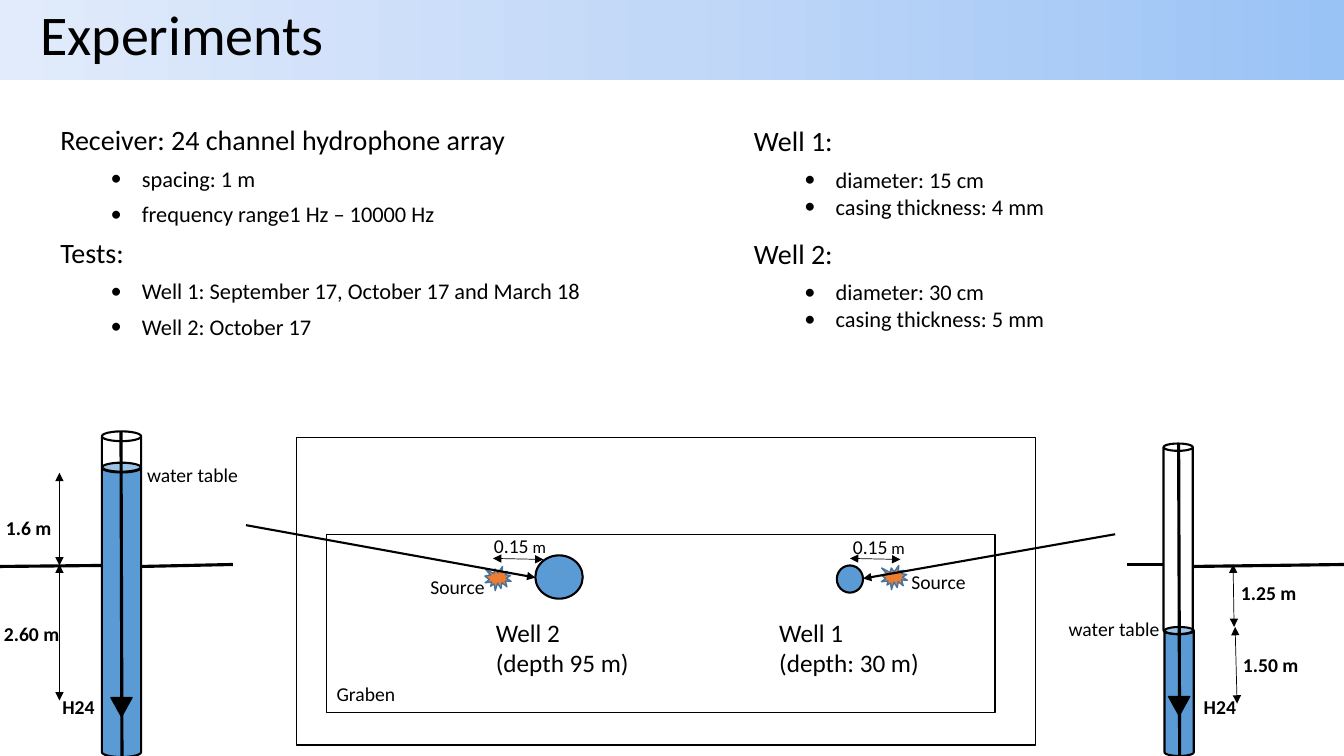
from copy import deepcopy

from lxml import etree
from pptx import Presentation
from pptx.dml.color import RGBColor
from pptx.enum.shapes import MSO_CONNECTOR, MSO_SHAPE
from pptx.enum.text import MSO_ANCHOR, MSO_AUTO_SIZE, PP_ALIGN
from pptx.oxml.ns import qn
from pptx.util import Inches, Pt

BLACK = RGBColor(0x00, 0x00, 0x00)
WATER = RGBColor(0x5B, 0x9B, 0xD5)
BLAST = RGBColor(0xED, 0x7D, 0x31)
BLAST_EDGE = RGBColor(0x43, 0x73, 0x9E)
BANNER = ((0, RGBColor(0x9A, 0xC3, 0xF5)),
          (0.5, RGBColor(0xC2, 0xD8, 0xF8)),
          (1, RGBColor(0xE1, 0xEB, 0xFB)))

RECT, OVAL, CAN = MSO_SHAPE.RECTANGLE, MSO_SHAPE.OVAL, MSO_SHAPE.CAN
TRIANGLE, BURST = MSO_SHAPE.ISOSCELES_TRIANGLE, MSO_SHAPE.EXPLOSION1
STRAIGHT = MSO_CONNECTOR.STRAIGHT
LEFT, MIDDLE, TOP = PP_ALIGN.LEFT, MSO_ANCHOR.MIDDLE, MSO_ANCHOR.TOP
FIT, FIXED = MSO_AUTO_SIZE.SHAPE_TO_FIT_TEXT, MSO_AUTO_SIZE.NONE

FONT = "Calibri"
COLS, ROWS = 133.3, 75
CELL = Inches(0.1)


def cells(*counts):
    """Lengths of the given numbers of grid cells."""
    return [round(count * CELL) for count in counts]


def apply(target, values):
    for name, value in values.items():
        setattr(target, name, value)


class Board:
    """Style and current slide; places are grid columns and rows."""

    def __init__(self, slide):
        self.slide = slide
        self.shapes = slide.shapes

    def shape(self, kind, box, fill=None, edge=BLACK, weight=1.5, **extra):
        item = self.shapes.add_shape(kind, *cells(*box))
        item.shadow.inherit = False
        if fill is None:
            item.fill.background()
        else:
            item.fill.solid()
            item.fill.fore_color.rgb = fill
        item.line.color.rgb = edge
        item.line.width = Pt(weight)
        apply(item, extra)
        return item

    def banner(self, box, stops):
        band = self.shape(RECT, box)
        band.line.fill.background()
        band.fill.gradient()
        band.fill.gradient_angle = 180
        stop_list = band.fill.gradient_stops
        first = next(band._element.spPr.iter(qn("a:gs")))
        for _ in range(len(stops) - len(stop_list)):
            first.addnext(deepcopy(first))
        for stop, (position, colour) in zip(band.fill.gradient_stops, stops):
            stop.position = position
            stop.color.rgb = colour

    def line(self, start, end, weight=2.25, arrows=()):
        link = self.shapes.add_connector(STRAIGHT, *cells(*start, *end))
        link.line.color.rgb = BLACK
        link.line.width = Pt(weight)
        outline = link.line._get_or_add_ln()
        for arrow in arrows:
            etree.SubElement(outline, qn(f"a:{arrow}"), type="triangle")
        etree.SubElement(link._element.spPr, qn("a:effectLst"))

    def measure(self, start, end):
        self.line(start, end, 0.5, ("headEnd", "tailEnd"))

    def text(self, box, paragraphs, wrap=False, anchor=TOP, fit=FIT):
        """Each paragraph is (runs, format values, bulleted); a run is (text, font values)."""
        frame = self.shapes.add_textbox(*cells(*box)).text_frame
        apply(frame, {"word_wrap": wrap, "vertical_anchor": anchor, "auto_size": fit})
        for index, (runs, values, bulleted) in enumerate(paragraphs):
            para = frame.add_paragraph() if index else frame.paragraphs[0]
            apply(para, {"alignment": LEFT, **values})
            if bulleted:
                para.level = 1
                props = para._p.get_or_add_pPr()
                for name, length in zip(("marL", "indent"), cells(8.1, -3.1)):
                    props.set(name, str(length))
                etree.SubElement(props, qn("a:buFont"), typeface=FONT)
                etree.SubElement(props, qn("a:buChar"), char="•")
            for words, font in runs:
                run = para.add_run()
                run.text = words
                apply(run.font, {"name": FONT, **font})
                run.font.color.rgb = BLACK

    def label(self, box, *lines, size=14, bold=False):
        font = {"size": Pt(size), "bold": bold}
        self.text(box, [([(words, font)], {}, False) for words in lines])

    def outline(self, box, entries):
        """Headings and bullets from (text, bulleted, space after)."""
        self.text(box, [([(words, {"size": Pt(16 if bulleted else 20)})],
                         {"space_after": Pt(after)}, bulleted)
                        for words, bulleted, after in entries], wrap=True)


def main():
    deck = Presentation()
    deck.slide_width, deck.slide_height = cells(COLS, ROWS)
    board = Board(deck.slides.add_slide(deck.slide_layouts[6]))

    # Title banner
    board.banner((0, 0, COLS, 7.9), BANNER)
    board.text((3, 0.7, 103.2, 6.1),
               [([("Experiments", {"size": Pt(40)})],
                 {"line_spacing": 0.9, "space_before": Pt(10)}, False)],
               wrap=True, anchor=MIDDLE, fit=FIXED)

    # Site plan: surrounding area and graben
    board.shape(RECT, (29.4, 43.4, 73.3, 30.5), weight=1)
    board.shape(RECT, (32.4, 53, 66.3, 17.7), weight=1)
    board.label((32.4, 67.2, 7.9, 3.4), "Graben")

    # Wells in plan: circle, name, source, offset between them
    plans = (
        ((83, 56.1, 2.6, 2.7), (76.3, 60.7, 16.1, 7.1), ("Well 1", "(depth: 30 m)"),
         (87.4, 56.1), (89.4, 56.1), 84.3, (83.6, 52.6)),
        ((53.1, 55.1, 4.7, 4.3), (48.2, 60.7, 15.4, 7.1), ("Well 2", "(depth 95 m)"),
         (48.1, 56.2), (41.7, 56.5), 48.9, (48, 52.5)),
    )
    for circle, name_box, name, blast, source, offset, distance in plans:
        board.shape(OVAL, circle, WATER)
        board.label(name_box, *name, size=18)
        board.label((*source, 7.4, 3.4), "Source")
        board.shape(BURST, (*blast, 2.6, 2.4), BLAST, BLAST_EDGE, 1)
        board.measure((offset, 55.4), (offset + 5, 55.5))
        board.text((*distance, 7.2, 3.4),
                   [([("0.15", {"size": Pt(14)}), (" m", {"size": Pt(12)})], {}, False)])

    # Wells in section: water, casing, hydrophone string, ground, water table
    sections = (
        ((115.5, 62.2, 2.9, 12.8), (115.4, 44, 2.9, 18.9), ((117, 75), (116.9, 44)),
         (115.9, 69.1), (118.4, 68.4), (105, 60.7),
         (((111.8, 56), (115.4, 56)), ((118.3, 56.2), (133.4, 56)))),
        ((10.1, 45.9, 3.9, 29.2), (10.1, 42.8, 3.9, 4), ((12.1, 75.1), (12, 42.8)),
         (11, 69.2), (5.2, 68.4), (13.6, 45.4),
         (((0, 56.2), (10, 56.1)), ((14, 56.2), (23.1, 56)))),
    )
    for water, casing, string, tip, deepest, table, ground in sections:
        board.shape(CAN, water, WATER)
        for start, end in (string, *ground):
            board.line(start, end)
        board.shape(TRIANGLE, (*tip, 2.1, 1.9), BLACK, weight=1, rotation=180)
        board.label((*deepest, 5.2, 3.4), "H24", bold=True)
        board.label((*table, 11.1, 3.4), "water table")
        board.shape(CAN, casing)

    # Depth measures
    depths = (
        ((122.4, 62.2), (122.3, 56), (122.1, 57.1, 7.6, 3.4), "1.25 m"),
        ((122.7, 69.8), (122.5, 62.2), (122.3, 64.3, 7.6, 3.4), "1.50 m"),
        ((5.9, 56.1), (5.9, 46.9), (-0.4, 50.7, 6.6, 3.4), "1.6 m"),
        ((5.9, 69.5), (5.9, 56), (-0.6, 61.2, 7.6, 3.4), "2.60 m"),
    )
    for bottom, top, box, depth in depths:
        board.measure(bottom, top)
        board.label(box, depth, bold=True)

    # Pointers from sections to plan
    for section, plan in (((110.6, 53), (85.6, 57.4)), ((24.4, 52.1), (53.1, 57.3))):
        board.line(section, plan, 1.5, ("tailEnd",))

    # Receiver, tests and well details
    board.outline((5, 11.7, 66.7, 26.3), (
        ("Receiver: 24 channel hydrophone array", False, 6),
        ("spacing: 1 m", True, 6),
        ("frequency range1 Hz – 10000 Hz", True, 6),
        ("Tests:", False, 6),
        ("Well 1: September 17, October 17 and March 18", True, 6),
        ("Well 2: October 17", True, 6)))
    board.outline((73.8, 11.8, 37.3, 24.9), (
        ("Well 1:", False, 6),
        ("diameter: 15 cm", True, 0),
        ("casing thickness: 4 mm", True, 12),
        ("Well 2:", False, 6),
        ("diameter: 30 cm", True, 0),
        ("casing thickness: 5 mm", True, 0)))

    deck.save("out.pptx")


if __name__ == "__main__":
    main()
